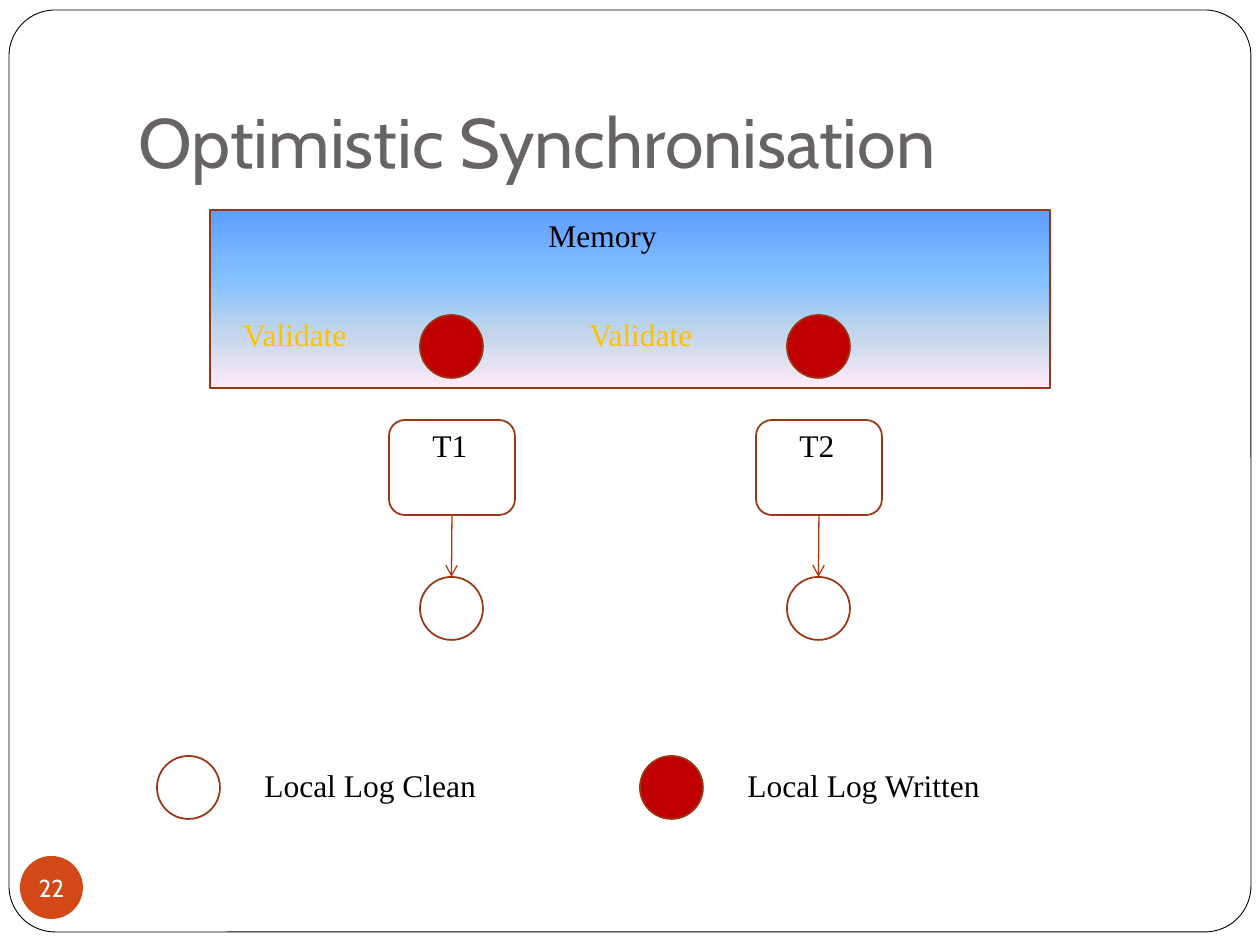
from lxml import etree
from pptx import Presentation
from pptx import util as u
from pptx.dml.color import RGBColor
from pptx.enum import shapes, text
from pptx.oxml import ns

PX = 7257  # EMU per px, 126 px to the inch

# Content
TITLE = "Optimistic Synchronisation"
NUMBER = "22"
MEMORY = "Memory"
THREADS = [  # name, centre x, left of its "Validate" label
    ("T1", 452, 231),
    ("T2", 819, 577),
]
LEGEND = [  # label, circle left, label width, log written
    ("Local Log Clean", 157, 325, False),
    ("Local Log Written", 640, 357, True),
]

THEME = {
    "title_font": "Cabin", "body_font": "Times New Roman",
    "title_size": 40, "body_size": 18, "number_size": 14,
    "title": "696464", "ink": "000000", "paper": "FFFFFF",
    "badge": "D34817", "outline": "9C3511", "arrow": "B1360B",
    "written": "C00000", "validate": "FFC000",
    "memory": [(0, "5E9EFF"), (40, "85C2FF"), (70, "C4D6EB"), (100, "FFEBFA")],
}
CIRCLE = 63
LABEL_H = 59


def px(*lengths):
    return [u.Emu(length * PX) for length in lengths]


def colour(name):
    return RGBColor.from_string(THEME[name])


def style_text(frame, size, ink, font="body_font"):
    for run in frame.paragraphs[0].runs:
        run.font.size = u.Pt(THEME[size])
        run.font.name = THEME[font]
        run.font.color.rgb = colour(ink)


def add_label(slide, words, left, top, width, ink="ink"):
    frame = slide.shapes.add_textbox(*px(left, top, width, LABEL_H)).text_frame
    frame.word_wrap = True
    frame.text = words
    style_text(frame, "body_size", ink)


def add_outline(slide, kind, box, fill=None, line="outline", weight=1):
    outline = slide.shapes.add_shape(kind, *px(*box))
    outline.shadow.inherit = False
    if fill:
        outline.fill.solid()
        outline.fill.fore_color.rgb = colour(fill)
    else:
        outline.fill.background()
    if line:
        outline.line.color.rgb = colour(line)
        outline.line.width = u.Pt(weight)
    else:
        outline.line.fill.background()
    return outline


def add_log(slide, left, top, written):
    return add_outline(slide, shapes.MSO_SHAPE.OVAL, (left, top, CIRCLE, CIRCLE),
                       "written" if written else None)


def add_arrow(slide, start, end):
    arrow = slide.shapes.add_connector(shapes.MSO_CONNECTOR.STRAIGHT, 0, 0, 0, 0)
    arrow.begin_connect(start, 2)
    arrow.end_connect(end, 0)
    arrow.line.color.rgb = colour("arrow")
    arrow.line.width = u.Pt(0.75)
    etree.SubElement(arrow.line._get_or_add_ln(), ns.qn("a:tailEnd"), type="arrow")
    etree.SubElement(arrow._element.spPr, ns.qn("a:effectLst"))


def fill_gradient(area, stops):
    area.fill.gradient()
    grad = area._element.spPr.find(ns.qn("a:gradFill"))
    for child in list(grad):
        grad.remove(child)
    stop_list = etree.SubElement(grad, ns.qn("a:gsLst"))
    for percent, value in stops:
        stop = etree.SubElement(stop_list, ns.qn("a:gs"), pos=str(percent * 1000))
        etree.SubElement(stop, ns.qn("a:srgbClr"), val=value)
    etree.SubElement(grad, ns.qn("a:lin"), ang="5400000", scaled="0")


def build():
    deck = Presentation()
    deck.slide_width, deck.slide_height = px(1260, 945)
    slide = deck.slides.add_slide(deck.slide_layouts[5])

    # Slide frame, behind the title
    frame = add_outline(slide, shapes.MSO_SHAPE.ROUNDED_RECTANGLE,
                        (9, 10, 1242, 922), "paper", "ink", 0.5)
    frame.adjustments[0] = 0.05
    slide.shapes._spTree.insert(2, frame._element)

    # Title
    title = slide.shapes.title
    title.left, title.top, title.width, title.height = px(126, 38, 1071, 157)
    heading = title.text_frame
    heading.text = TITLE
    heading.vertical_anchor = text.MSO_ANCHOR.BOTTOM
    heading.margin_bottom = u.Inches(0.1)
    heading.paragraphs[0].alignment = text.PP_ALIGN.LEFT
    style_text(heading, "title_size", "title", "title_font")

    # Slide number badge
    badge = add_outline(slide, shapes.MSO_SHAPE.OVAL, (20, 856, CIRCLE, CIRCLE),
                        "badge", None).text_frame
    badge.margin_left = badge.margin_right = 0
    badge.margin_top = badge.margin_bottom = 0
    badge.word_wrap = False
    badge.text = NUMBER
    badge.vertical_anchor = text.MSO_ANCHOR.MIDDLE
    badge.paragraphs[0].alignment = text.PP_ALIGN.CENTER
    style_text(badge, "number_size", "paper", "title_font")

    # Memory
    memory = add_outline(slide, shapes.MSO_SHAPE.RECTANGLE, (210, 210, 840, 178))
    fill_gradient(memory, THEME["memory"])
    add_label(slide, MEMORY, 536, 210, 179)

    # Threads, each with its shared and its local log
    for name, centre, validate_left in THREADS:
        log_left = centre - CIRCLE // 2 - 1
        add_label(slide, "Validate", validate_left, 309, 179, "validate")
        add_log(slide, log_left, 315, True)
        thread = add_outline(slide, shapes.MSO_SHAPE.ROUNDED_RECTANGLE,
                             (centre - 63, 420, 126, 95))
        add_label(slide, name, log_left, 420, 73)
        add_arrow(slide, thread, add_log(slide, log_left, 577, False))

    # Legend
    for words, left, width, written in LEGEND:
        add_log(slide, left, 756, written)
        add_label(slide, words, left + 95, 760, width)

    deck.save("out.pptx")


if __name__ == "__main__":
    build()
